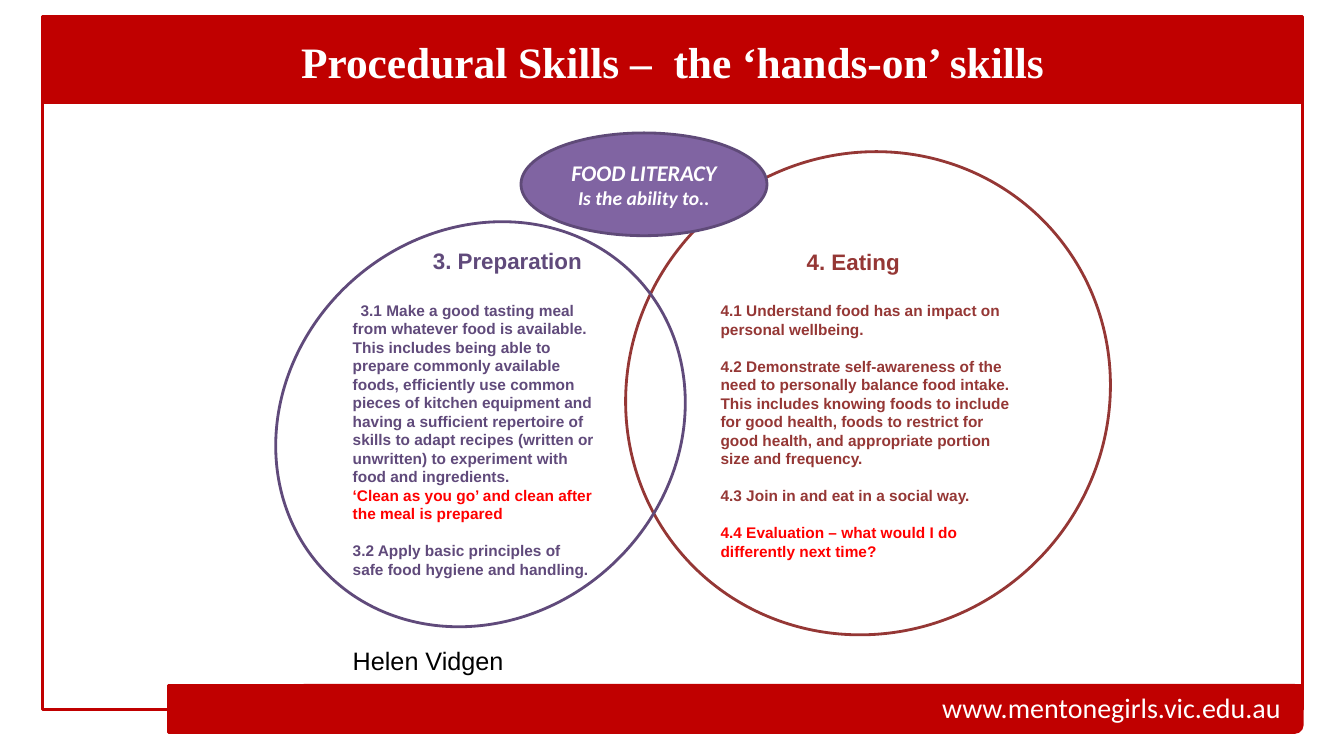
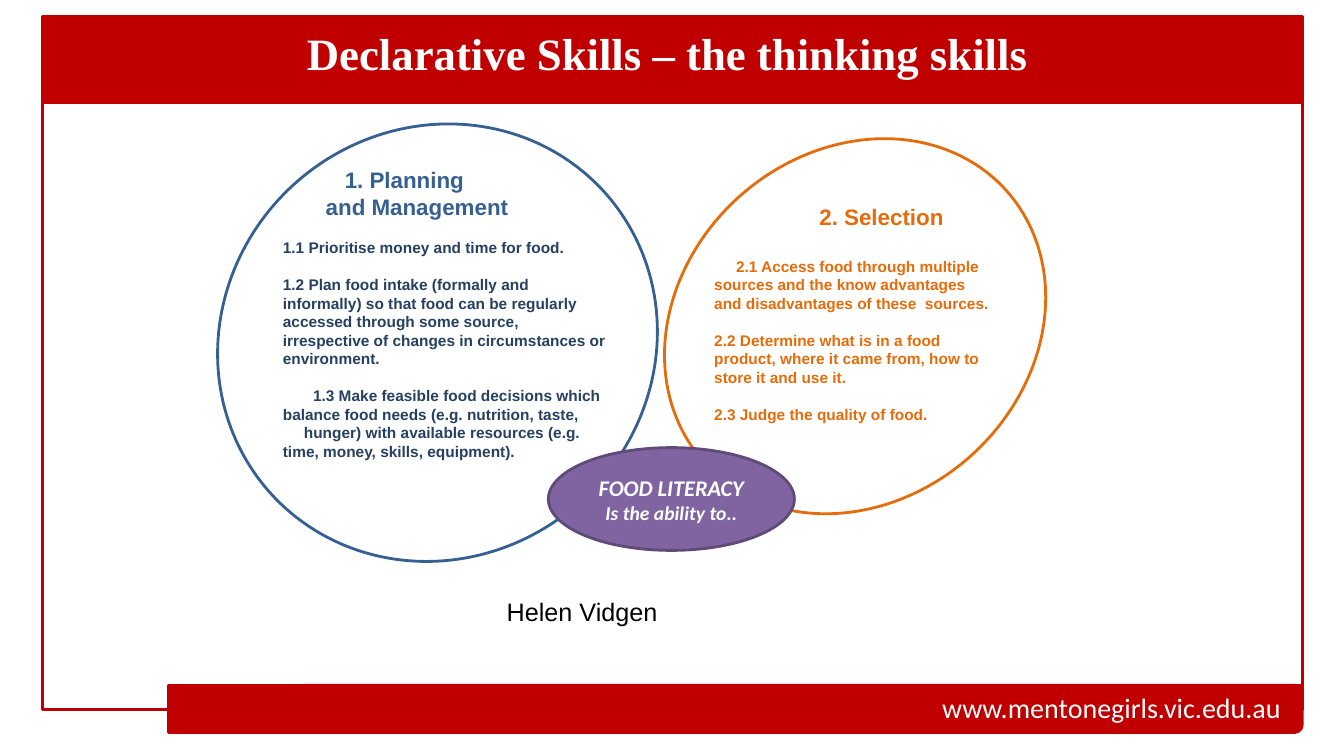
from dataclasses import dataclass

from pptx import Presentation
from pptx.dml.color import RGBColor
from pptx.enum.shapes import MSO_SHAPE
from pptx.enum.text import MSO_ANCHOR, PP_ALIGN
from pptx.util import Cm, Pt

RED = "C00000"
WHITE = "FFFFFF"
BLACK = "000000"
ADDED = "FF0000"
MAROON = "953735"
PURPLE = "604A7B"
ORANGE = "E46C0A"
BLUE = "376092"
NAVY = "254061"
HUB_FILL = "8064A2"
HUB_LINE = "5F4A78"

HEADING_SIZE = 16
BODY_SIZE = 11
LEADING = 1.2
HEADING_GAP = HEADING_SIZE * LEADING
BODY_GAP = BODY_SIZE * LEADING
TILT = 48


@dataclass
class Line:
    text: str
    color: str
    size: float = BODY_SIZE
    font: str = "Arial"
    bold: bool = True
    italic: bool = False
    align: PP_ALIGN = PP_ALIGN.LEFT
    before: float = 0
    margin: float = 0
    indent: float = 0


def rgb(hex_color):
    return RGBColor.from_string(hex_color)


def write_lines(frame, lines):
    frame.word_wrap = True
    for index, line in enumerate(lines):
        paragraph = frame.paragraphs[0] if index == 0 else frame.add_paragraph()
        properties = paragraph._p.get_or_add_pPr()
        properties.set("marL", str(Cm(line.margin)))
        properties.set("indent", str(Cm(line.indent)))
        paragraph.alignment = line.align
        paragraph.line_spacing = Pt(line.size * LEADING)
        paragraph.space_before = Pt(line.before)
        paragraph.text = line.text
        font = paragraph.font
        font.name = line.font
        font.size = Pt(line.size)
        font.bold = line.bold
        font.italic = line.italic
        font.color.rgb = rgb(line.color)


def add_text(slide, box, lines):
    frame = slide.shapes.add_textbox(*map(Cm, box)).text_frame
    write_lines(frame, lines)


def add_outline(slide, kind, box, line, fill=None, rotation=0):
    shape = slide.shapes.add_shape(kind, *map(Cm, box))
    shape.shadow.inherit = False
    shape.rotation = rotation
    if fill:
        shape.fill.solid()
        shape.fill.fore_color.rgb = rgb(fill)
    else:
        shape.fill.background()
    shape.line.color.rgb = rgb(line)
    shape.line.width = Pt(2)
    return shape


def add_school_frame(slide):
    square, rounded = MSO_SHAPE.RECTANGLE, MSO_SHAPE.ROUNDED_RECTANGLE
    for kind, box, fill in (
        (square, (1.07, 0.41, 31.75, 2.18), RED),
        (square, (1.07, 2.59, 31.75, 15.29), None),
        (rounded, (7.47, 17.27, 25.35, 1.19), RED),
        (square, (4.24, 17.27, 14.02, 1.19), RED),
        (square, (18.26, 17.27, 14.56, 0.46), RED),
    ):
        add_outline(slide, kind, box, RED, fill)
    add_text(slide, (6.88, 17.27, 25.65, 1.12), [
        Line("www.mentonegirls.vic.edu.au", WHITE, 20, "Calibri", False,
             align=PP_ALIGN.RIGHT),
    ])


def add_title(slide, box, text, size):
    add_text(slide, box, [
        Line(text, WHITE, size, "Times New Roman", align=PP_ALIGN.CENTER),
    ])


def add_skill_circle(slide, box, color, rotation, fill=None):
    add_outline(slide, MSO_SHAPE.OVAL, box, color, fill, rotation)


def add_hub(slide, left, top):
    hub = add_outline(slide, MSO_SHAPE.FLOWCHART_CONNECTOR,
                      (left, top, 6.2, 2.59), HUB_LINE, HUB_FILL)
    hub.text_frame.vertical_anchor = MSO_ANCHOR.MIDDLE
    write_lines(hub.text_frame, [
        Line(text, WHITE, size, "Calibri", italic=True, align=PP_ALIGN.CENTER)
        for text, size in (("FOOD LITERACY", 16), ("Is the ability to..", 14))
    ])


def add_author(slide, left, top):
    add_text(slide, (left, top, 6.1, 1.02),
             [Line("Helen Vidgen", BLACK, 18, bold=False)])


def heading(text, color, margin):
    return Line(text, color, HEADING_SIZE, margin=margin)


def build_procedural(slide):
    add_school_frame(slide)
    add_skill_circle(slide, (15.88, 3.71, 11.99, 12.4), MAROON, TILT, WHITE)
    add_text(slide, (17.91, 6.12, 8, 9.14), [
        heading("4. Eating", MAROON, 2.17),
        Line("4.1 Understand food has an impact on personal wellbeing.",
             MAROON, before=HEADING_GAP),
        Line("4.2 Demonstrate self-awareness of the need to personally balance "
             "food intake. This includes knowing foods to include for good "
             "health, foods to restrict for good health, and appropriate "
             "portion size and frequency.", MAROON, before=BODY_GAP),
        Line("4.3 Join in and eat in a social way.", MAROON, before=BODY_GAP),
        Line("4.4 Evaluation – what would I do differently next time?",
             ADDED, before=BODY_GAP),
    ])
    add_skill_circle(slide, (6.71, 5.84, 10.8, 9.7), PURPLE, TILT - 90)
    add_text(slide, (8.64, 6.1, 6.83, 8.69), [
        heading("3. Preparation", PURPLE, 2.02),
        Line("3.1 Make a good tasting meal from whatever food is available. "
             "This includes being able to prepare commonly available foods, "
             "efficiently use common pieces of kitchen equipment and having a "
             "sufficient repertoire of skills to adapt recipes (written or "
             "unwritten) to experiment with food and ingredients.",
             PURPLE, before=HEADING_GAP, indent=0.2),
        Line("‘Clean as you go’ and clean after the meal is prepared", ADDED),
        Line("3.2 Apply basic principles of", PURPLE, before=BODY_GAP),
        Line("safe food hygiene and handling.", PURPLE),
    ])
    add_hub(slide, 13.13, 3.35)
    add_title(slide, (5.03, 0.76, 23.83, 1.83),
              "Procedural Skills –  the ‘hands-on’ skills", 31)
    add_author(slide, 8.64, 16.13)


def build_declarative(slide):
    add_school_frame(slide)
    add_skill_circle(slide, (16.43, 3.84, 10.24, 8.76), ORANGE, TILT - 90)
    add_skill_circle(slide, (5.64, 2.97, 10.77, 11.33), BLUE, TILT)
    add_text(slide, (6.88, 4.06, 8.71, 7.75), [
        heading("1. Planning", BLUE, 1.56),
        heading("and Management", BLUE, 1.08),
        Line("1.1 Prioritise money and time for food.", NAVY, before=BODY_GAP),
        Line("1.2 Plan food intake (formally and informally) so that food can "
             "be regularly accessed through some source, irrespective of "
             "changes in circumstances or environment.", NAVY, before=BODY_GAP),
        Line("1.3 Make feasible food decisions which balance food needs "
             "(e.g. nutrition, taste,", NAVY, before=BODY_GAP, indent=0.76),
        Line("hunger) with available resources (e.g. time, money, skills, "
             "equipment).", NAVY, indent=0.53),
    ])
    add_text(slide, (17.75, 5, 7.59, 5.87), [
        heading("2. Selection", ORANGE, 2.65),
        Line("2.1 Access food through multiple sources and the know advantages "
             "and disadvantages of these  sources.",
             ORANGE, before=HEADING_GAP, indent=0.55),
        Line("2.2 Determine what is in a food product, where it came from, "
             "how to store it and use it.", ORANGE, before=BODY_GAP),
        Line("2.3 Judge the quality of food.", ORANGE, before=BODY_GAP),
    ])
    add_hub(slide, 13.82, 11.28)
    add_title(slide, (5.13, 0.53, 23.39, 1.78),
              "Declarative Skills – the thinking skills", 32)
    add_author(slide, 12.52, 14.91)


def main():
    deck = Presentation()
    deck.slide_width = Cm(33.87)
    deck.slide_height = Cm(19.05)
    blank = deck.slide_layouts[6]
    for build in (build_procedural, build_declarative):
        build(deck.slides.add_slide(blank))
    deck.save("out.pptx")


if __name__ == "__main__":
    main()
